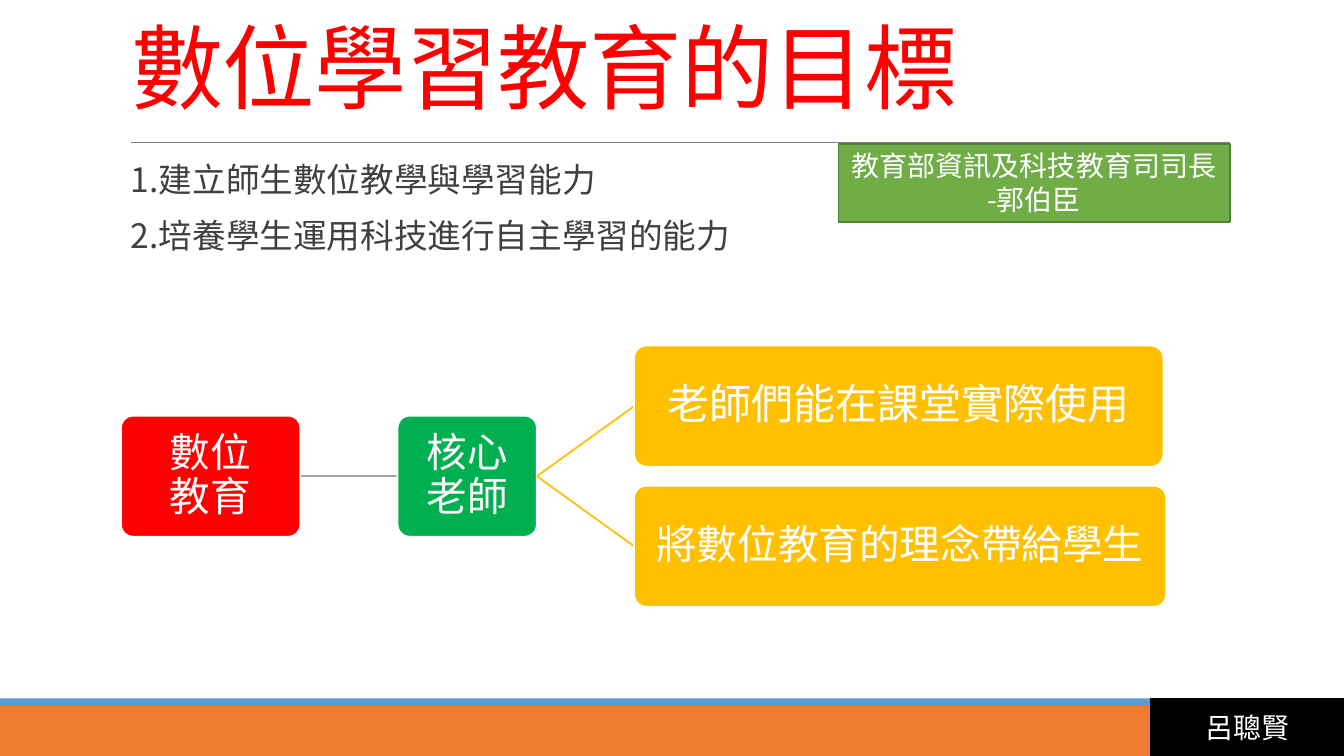
from lxml import etree
from pptx import Presentation
from pptx import util as u
from pptx.dml import color
from pptx.enum import shapes, text
from pptx.oxml import ns

FONT = "Noto Sans CJK SC"
COLORS = {
    "white": "FFFFFF", "black": "000000", "red": "FF0000", "green": "00B050",
    "amber": "FFC000", "gray": "A5A5A5", "rule": "808080", "ink": "404040",
    "orange": "ED7D31", "blue": "5B9BD5", "badge": "70AD47", "badge_edge": "538035",
}


def rgb(name):
    return color.RGBColor.from_string(COLORS[name])


def place(sp, box):
    sp.left, sp.top, sp.width, sp.height = (u.Cm(v) for v in box)


def add_run(p, words, size, ink):
    r = p.add_run()
    r.text = words
    r.font.size = u.Pt(size)
    r.font.name = FONT
    r.font.color.rgb = rgb(ink)
    etree.SubElement(r.font._element, ns.qn("a:ea"), typeface=FONT)
    return r


def add_block(s, box, fill, edge=None, kind=shapes.MSO_SHAPE.RECTANGLE):
    sp = s.shapes.add_shape(kind, *(u.Cm(v) for v in box))
    sp.shadow.inherit = False
    sp.fill.solid()
    sp.fill.fore_color.rgb = rgb(fill)
    if edge:
        sp.line.color.rgb = rgb(edge)
        sp.line.width = u.Pt(1.25)
    else:
        sp.line.fill.background()
    return sp


def add_line(s, start, end, ink, width=1.25):
    c = s.shapes.add_connector(
        shapes.MSO_CONNECTOR.STRAIGHT, *(u.Cm(v) for v in start + end))
    c.line.color.rgb = rgb(ink)
    c.line.width = u.Pt(width)
    etree.SubElement(c._element.spPr, ns.qn("a:effectLst"))


def add_footer(s, box, author):
    x, y, w, h = box
    stripe, tag = 0.17, 4.86
    add_block(s, (x, y + stripe, w, h - stripe), "orange")
    add_block(s, (x, y, w, stripe), "blue")
    sp = add_block(s, (x + w - tag, y, tag, h), "black", "black")
    p = sp.text_frame.paragraphs[0]
    p.alignment = text.PP_ALIGN.CENTER
    add_run(p, author, 20, "white")


def add_title(s, box, words):
    sp = s.shapes.title
    place(sp, box)
    tf = sp.text_frame
    tf.auto_size = text.MSO_AUTO_SIZE.NONE
    tf.vertical_anchor = text.MSO_ANCHOR.BOTTOM
    p = tf.paragraphs[0]
    p.alignment = text.PP_ALIGN.LEFT
    p.line_spacing = 0.85
    r = add_run(p, words, 66, "red")
    r.font._element.set("spc", "-50")
    x, _, w, _ = box
    add_line(s, (x + 0.25, 3.58), (x + w, 3.58), "rule", 0.5)


def add_goals(s, box, goals):
    sp = s.placeholders[1]
    place(sp, box)
    tf = sp.text_frame
    tf.auto_size = text.MSO_AUTO_SIZE.NONE
    tf.margin_left = tf.margin_right = 0
    for i, goal in enumerate(goals):
        p = tf.add_paragraph() if i else tf.paragraphs[0]
        p.line_spacing = 0.9
        p.space_before, p.space_after = u.Pt(12), u.Pt(2)
        pPr = p._p.get_or_add_pPr()
        pPr.set("marL", str(u.Cm(0.25)))
        pPr.set("indent", str(u.Cm(-0.25)))
        etree.SubElement(pPr, ns.qn("a:buChar"), char=" ")
        add_run(p, goal, 24, "ink")


def add_badge(s, box, lines):
    tf = add_block(s, box, "badge", "badge_edge").text_frame
    tf.vertical_anchor = text.MSO_ANCHOR.TOP
    for i, line in enumerate(lines):
        p = tf.add_paragraph() if i else tf.paragraphs[0]
        p.alignment = text.PP_ALIGN.CENTER
        add_run(p, line, 20, "white")


def add_node(s, box, lines, fill, size=29):
    sp = add_block(s, box, fill, "white", shapes.MSO_SHAPE.ROUNDED_RECTANGLE)
    sp.adjustments[0] = 0.1
    tf = sp.text_frame
    tf.margin_left = tf.margin_right = tf.margin_top = tf.margin_bottom = u.Cm(0.05)
    p = tf.paragraphs[0]
    p.alignment = text.PP_ALIGN.CENTER
    p.line_spacing = 0.9
    for i, line in enumerate(lines):
        if i:
            p.add_line_break()
        add_run(p, line, size, "white")


def add_tree(s, box):
    x, y, _, h = box
    node_h, gap, root_w, core_w = 3.05, 2.45, 4.52, 3.51
    mid = y + h / 2
    core_x = x + root_w + gap
    core_end = core_x + core_w
    leaf_x = core_end + gap
    add_line(s, (x + root_w, mid), (core_x, mid), "gray")
    add_node(s, (x, mid - node_h / 2, root_w, node_h), ["數位", "教育"], "red")
    add_node(s, (core_x, mid - node_h / 2, core_w, node_h), ["核心", "老師"], "green")
    leaves = [
        (y, 13.34, "老師們能在課堂實際使用", 30),
        (y + h - node_h, 13.41, "將數位教育的理念帶給學生", 29),
    ]
    for top, width, words, size in leaves:
        add_line(s, (core_end, mid), (leaf_x, top + node_h / 2), "amber")
        add_node(s, (leaf_x, top, width, node_h), [words], "amber", size)


def main():
    prs = Presentation()
    prs.slide_width, prs.slide_height = u.Cm(33.87), u.Cm(19.05)
    s = prs.slides.add_slide(prs.slide_layouts[1])
    add_footer(s, (0, 17.6, 33.87, 1.45), "呂聰賢")
    add_title(s, (3.05, 0.79, 27.94, 2.39), "數位學習教育的目標")
    add_goals(s, (3.05, 3.99, 27.94, 12.32),
              ["1.建立師生數位教學與學習能力", "2.培養學生運用科技進行自主學習的能力"])
    add_badge(s, (21.13, 3.63, 9.86, 1.96), ["教育部資訊及科技教育司司長", "-郭伯臣"])
    add_tree(s, (3.05, 8.71, 26.34, 6.58))
    prs.save("out.pptx")


if __name__ == "__main__":
    main()
